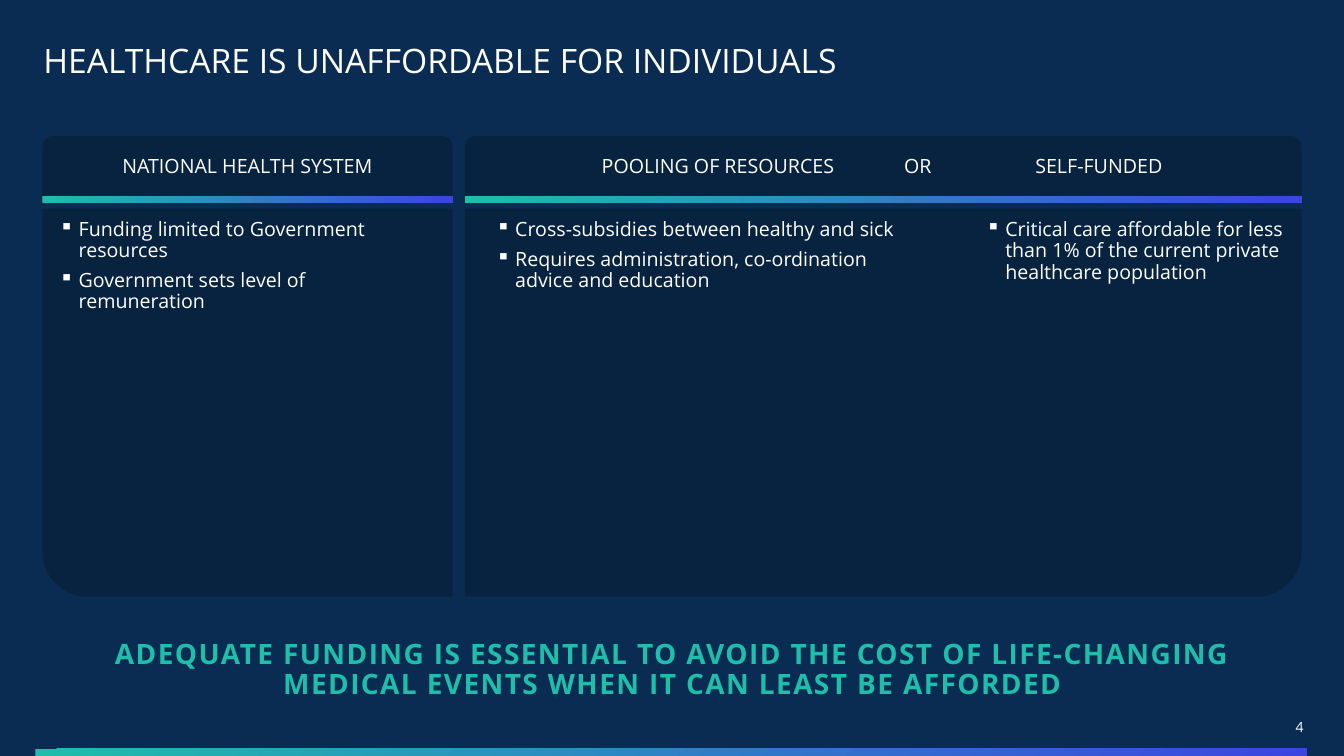
from lxml import etree
from pptx import Presentation
from pptx.dml.color import RGBColor
from pptx.enum.shapes import MSO_SHAPE
from pptx.enum.text import MSO_ANCHOR, PP_ALIGN
from pptx.oxml.ns import qn
from pptx.util import Inches, Pt

NAVY = RGBColor(0x0A, 0x2C, 0x52)
DARK = RGBColor(0x08, 0x23, 0x40)
TEAL = RGBColor(0x1E, 0xBE, 0xAA)
VIOLET = RGBColor(0x3D, 0x45, 0xE0)
WHITE = RGBColor(0xFF, 0xFF, 0xFF)

RECT = MSO_SHAPE.RECTANGLE
ROUND_ONE = MSO_SHAPE.ROUND_1_RECTANGLE
ROUND_TOP = MSO_SHAPE.ROUND_2_SAME_RECTANGLE
TOP, MIDDLE, BOTTOM = MSO_ANCHOR.TOP, MSO_ANCHOR.MIDDLE, MSO_ANCHOR.BOTTOM
LEFT, CENTER, RIGHT = PP_ALIGN.LEFT, PP_ALIGN.CENTER, PP_ALIGN.RIGHT

FONT = "Open Sans"
HEAD_TOP, HEAD_H = 1.35, 0.59
RULE_TOP, RULE_H = 1.94, 0.07
BODY_TOP, BODY_H = 2.07, 3.85
LIST_TOP, LIST_H = 2.14, 1.14
RADIUS = 0.45
INDENT = 0.19

# left, width, mirrored body, header text, header tab stops, header inset
PANELS = [
    (0.42, 4.07, False, "NATIONAL HEALTH SYSTEM", (), None),
    (4.61, 8.3, True, "POOLING OF RESOURCES\tOR\tSELF-FUNDED",
     (3.0, 4.3), 1.33),
]

# left, width, points
LISTS = [
    (0.55, 3.7, ["Funding limited to Government resources",
                 "Government sets level of remuneration"]),
    (4.88, 4.23, ["Cross-subsidies between healthy and sick",
                  "Requires administration, co-ordination advice "
                  "and education"]),
    (9.74, 3.05, ["Critical care affordable for less than 1% of the "
                  "current private healthcare population"]),
]


def apply(target, values):
    for name, value in values.items():
        setattr(target, name, value)


def style(para, size, align=LEFT, color=WHITE, bold=False):
    apply(para, {"alignment": align, "line_spacing": 0.9})
    apply(para.font, {"name": FONT, "size": Pt(size), "bold": bold})
    para.font.color.rgb = color


def add_shape(slide, kind, box):
    shape = slide.shapes.add_shape(kind, *map(Inches, box))
    shape.shadow.inherit = False
    shape.line.fill.background()
    return shape


def add_block(slide, kind, box):
    block = add_shape(slide, kind, box)
    block.fill.solid()
    block.fill.fore_color.rgb = DARK
    return block


def add_rule(slide, box, angle=0):
    """Draw a bar that fades from teal to violet."""
    fill = add_shape(slide, RECT, box).fill
    fill.gradient()
    fill.gradient_angle = angle
    for stop, color in zip(fill.gradient_stops, (TEAL, VIOLET)):
        stop.color.rgb = color


def add_frame(slide, box, anchor=TOP, inset=0):
    """Add a wrapping text box and return its text frame."""
    frame = slide.shapes.add_textbox(*map(Inches, box)).text_frame
    pad = Inches(inset)
    apply(frame, {"word_wrap": True, "vertical_anchor": anchor,
                  "margin_left": pad, "margin_right": pad,
                  "margin_top": pad, "margin_bottom": pad})
    return frame


def add_label(slide, box, text, size, anchor=TOP, **look):
    frame = add_frame(slide, box, anchor)
    para = frame.paragraphs[0]
    para.text = text
    style(para, size, **look)
    return frame


def add_tabs(para, stops):
    tabs = etree.SubElement(para._p.get_or_add_pPr(), qn("a:tabLst"))
    for stop in stops:
        etree.SubElement(tabs, qn("a:tab"), pos=str(Inches(stop)), algn="l")


def add_bullet(para):
    props = para._p.get_or_add_pPr()
    props.set("marL", str(Inches(INDENT)))
    props.set("indent", str(-Inches(INDENT)))
    etree.SubElement(props, qn("a:buChar"), char="▪")


def add_panel(slide, left, width, mirror, text, stops, inset):
    body = add_block(slide, ROUND_ONE, (left, BODY_TOP, width, BODY_H))
    body.adjustments[0] = RADIUS / BODY_H
    body.rotation = 180
    if mirror:
        body.element.spPr.xfrm.set("flipH", "1")

    head = add_block(slide, ROUND_TOP, (left, HEAD_TOP, width, HEAD_H))
    frame = head.text_frame
    frame.vertical_anchor = MIDDLE
    para = frame.paragraphs[0]
    para.text = text
    if stops:
        frame.margin_left = Inches(inset)
        add_tabs(para, stops)
    style(para, 14, LEFT if stops else CENTER)
    add_rule(slide, (left, RULE_TOP, width, RULE_H))


def add_list(slide, left, width, points):
    frame = add_frame(slide, (left, LIST_TOP, width, LIST_H), inset=0.04)
    for i, point in enumerate(points):
        para = frame.add_paragraph() if i else frame.paragraphs[0]
        para.text = point
        add_bullet(para)
        style(para, 14)
        para.space_after = Pt(6)


def add_banner(slide):
    frame = add_label(
        slide, (0.44, 6.26, 12.46, 0.82),
        "ADEQUATE FUNDING IS ESSENTIAL TO AVOID THE COST OF LIFE-CHANGING "
        "MEDICAL EVENTS WHEN IT CAN LEAST BE AFFORDED",
        20, MIDDLE, align=CENTER, color=TEAL, bold=True)
    apply(frame, {"margin_top": Inches(0.04), "margin_bottom": Inches(0.08)})
    run = frame.paragraphs[0].runs[0]
    run._r.get_or_add_rPr().set("spc", "100")


def main():
    deck = Presentation()
    apply(deck, {"slide_width": Inches(13.33), "slide_height": Inches(7.5)})
    slide = deck.slides.add_slide(deck.slide_layouts[6])
    slide.background.fill.solid()
    slide.background.fill.fore_color.rgb = NAVY

    add_label(slide, (12.62, 7.15, 0.31, 0.17), "4", 10, align=RIGHT)
    add_rule(slide, (0.35, 7.43, 12.61, 0.07), angle=315)
    add_label(slide, (0.43, 0.43, 12.49, 0.37),
              "HEALTHCARE IS UNAFFORDABLE FOR INDIVIDUALS", 24, BOTTOM)
    for panel in PANELS:
        add_panel(slide, *panel)
    for column in LISTS:
        add_list(slide, *column)
    add_banner(slide)
    deck.save("out.pptx")


if __name__ == "__main__":
    main()
